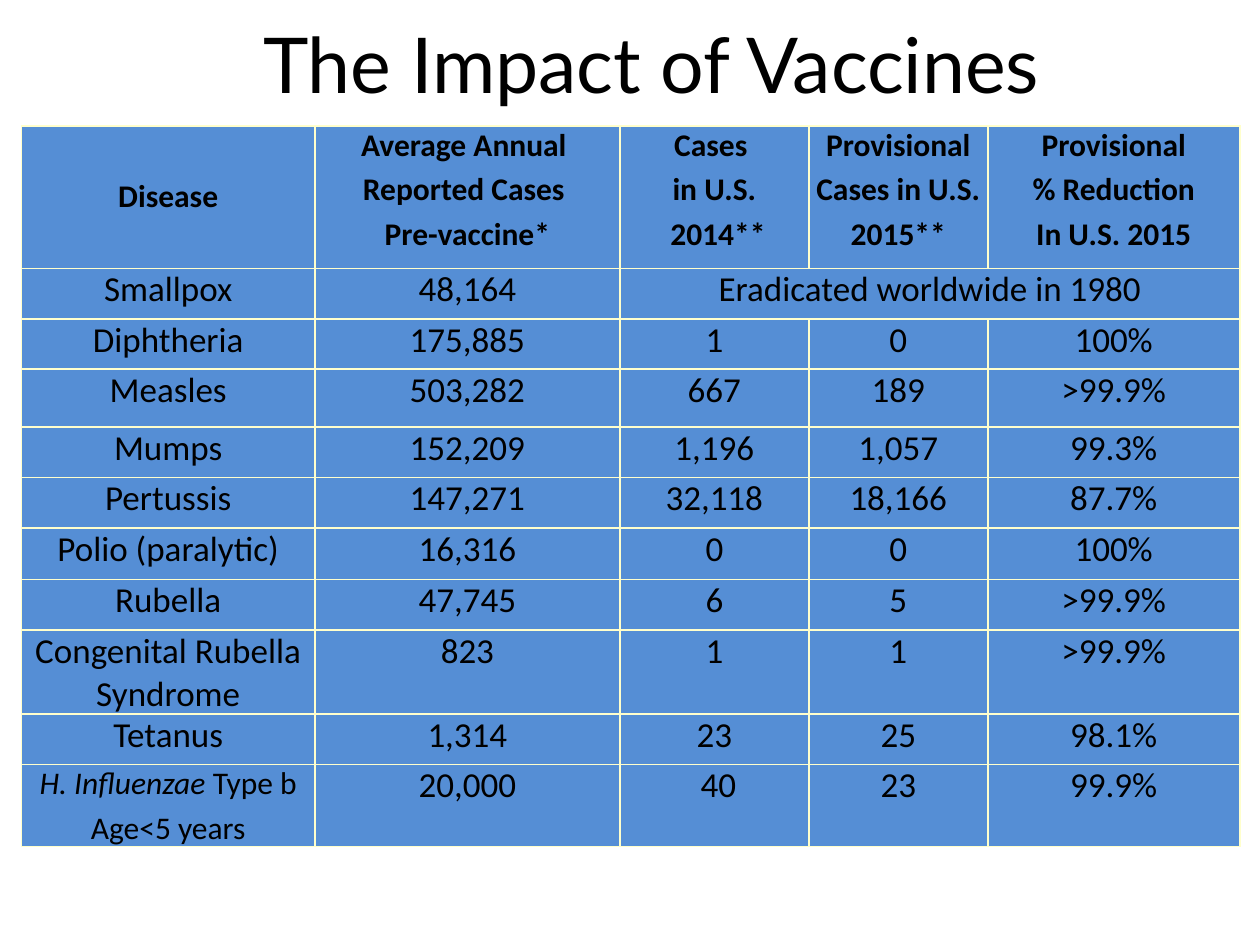
from lxml import etree
from pptx import Presentation
from pptx import util as u
from pptx.dml.color import RGBColor
from pptx.enum import text as t
from pptx.oxml import ns

BLACK = RGBColor(0x00, 0x00, 0x00)
BLUE = RGBColor(0x55, 0x8E, 0xD5)
CREAM = RGBColor(0xFF, 0xFF, 0xCC)

TITLE = "The Impact of Vaccines "
HEADINGS = (
    "Disease",
    "Average Annual \nReported Cases \nPre-vaccine*",
    "Cases \nin U.S.\n 2014**",
    "Provisional\nCases in U.S.\n2015**",
    "Provisional\n% Reduction\nIn U.S. 2015",
)
SPECIES = "H. Influenzae "
DISEASES = [
    ("Smallpox", "48,164", "Eradicated worldwide in 1980", "", ""),
    ("Diphtheria", "175,885", "1", "0", "100%"),
    ("Measles", "503,282", "667", "189", ">99.9%"),
    ("Mumps", "152,209", "1,196", "1,057", "99.3%"),
    ("Pertussis", "147,271", "32,118", "18,166", "87.7%"),
    ("Polio (paralytic)", "16,316", "0", "0", "100%"),
    ("Rubella", "47,745", "6", "5", ">99.9%"),
    ("Congenital Rubella Syndrome", "823", "1", "1", ">99.9%"),
    ("Tetanus", "1,314", "23", "25", "98.1%"),
    (SPECIES + "Type b\nAge<5 years", "20,000", " 40", "23", "99.9%"),
]
COLUMN_WIDTHS = (2.33, 2.42, 1.5, 1.42, 2)
ROW_HEIGHTS = (1.13, 0.4, 0.4, 0.46, 0.4, 0.4, 0.41, 0.4, 0.56, 0.4, 0.44)


def write_text(frame, content, size, font="Calibri", bold=False, italic_part="", spacing=0.2):
    for index, line in enumerate(content.split("\n")):
        paragraph = frame.add_paragraph() if index else frame.paragraphs[0]
        paragraph.alignment = t.PP_ALIGN.CENTER
        paragraph.space_before = u.Pt(size * spacing)
        lead = italic_part if line.startswith(italic_part) else ""
        for words, italic in ((lead, True), (line[len(lead):], False)):
            if words:
                run = paragraph.add_run()
                run.text = words
                run.font.size = u.Pt(size)
                run.font.name = font
                run.font.bold = bold
                run.font.italic = italic
                run.font.color.rgb = BLACK


def style_cell(cell):
    cell.margin_left = cell.margin_right = cell.margin_top = cell.margin_bottom = 0
    properties = cell._tc.get_or_add_tcPr()
    for side in ("a:lnL", "a:lnR", "a:lnT", "a:lnB"):
        border = etree.SubElement(properties, ns.qn(side), w=str(u.Pt(1)))
        fill = etree.SubElement(border, ns.qn("a:solidFill"))
        etree.SubElement(fill, ns.qn("a:srgbClr"), val=str(CREAM))
    cell.fill.solid()
    cell.fill.fore_color.rgb = BLUE


def add_disease_table(slide):
    rows = [HEADINGS] + DISEASES
    table = slide.shapes.add_table(
        len(rows), len(HEADINGS), u.Inches(0.17), u.Inches(1),
        u.Inches(sum(COLUMN_WIDTHS)), u.Inches(sum(ROW_HEIGHTS)),
    ).table
    for column, width in zip(table.columns, COLUMN_WIDTHS):
        column.width = u.Inches(width)
    for row, height in zip(table.rows, ROW_HEIGHTS):
        row.height = u.Inches(height)
    for r, row in enumerate(rows):
        for c, content in enumerate(row):
            cell = table.cell(r, c)
            style_cell(cell)
            if content:
                heading = r == 0
                small = heading or content.startswith(SPECIES)
                write_text(cell.text_frame, content, 18 if small else 20,
                           bold=heading, italic_part=SPECIES)
    table.cell(0, 0).vertical_anchor = t.MSO_ANCHOR.MIDDLE
    table.cell(1, 2).merge(table.cell(1, 4))


def main():
    deck = Presentation()
    deck.slide_width, deck.slide_height = u.Inches(10), u.Inches(7.5)
    slide = deck.slides.add_slide(deck.slide_layouts[5])
    title = slide.shapes.title
    title.left, title.top = u.Inches(1.25), u.Inches(0.08)
    title.width, title.height = u.Inches(8), u.Inches(0.84)
    title.text_frame.vertical_anchor = t.MSO_ANCHOR.TOP
    title.text_frame.auto_size = t.MSO_AUTO_SIZE.SHAPE_TO_FIT_TEXT
    write_text(title.text_frame, TITLE, 44, font="Lato", spacing=0.5)
    add_disease_table(slide)
    deck.save("out.pptx")


if __name__ == "__main__":
    main()
